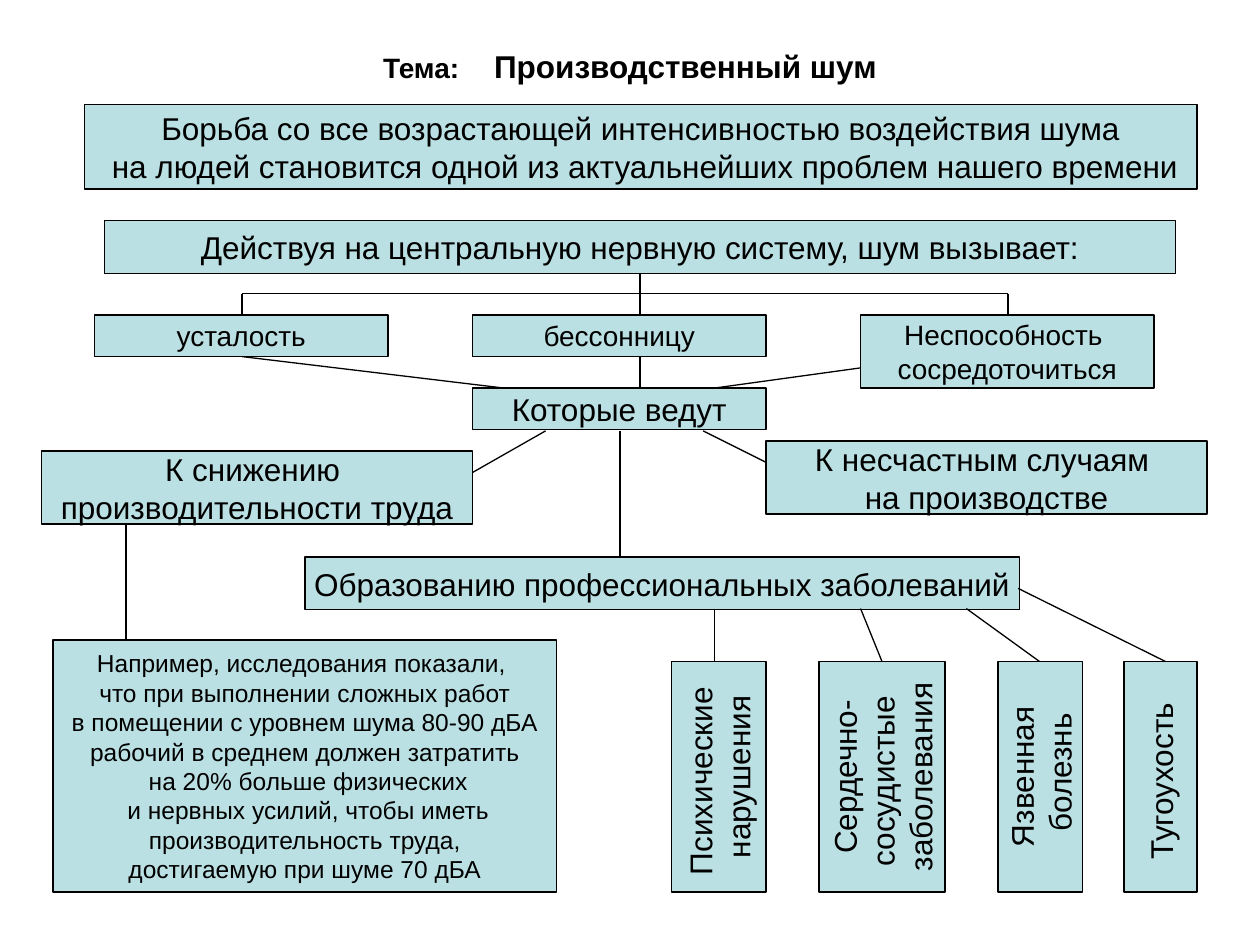
from pptx import Presentation
from pptx.dml.color import RGBColor
from pptx.enum import shapes, text
from pptx.oxml import xmlchemy
from pptx.util import Inches, Pt

FONT = "Arial"
BLACK = RGBColor(0x00, 0x00, 0x00)
PALE_TEAL = RGBColor(0xBB, 0xE0, 0xE3)
LINE_WIDTH = Pt(0.75)

# Text, size in points, letter spacing in hundredths of a point
TITLE_RUNS = [("Тема:", 16, 0), (" ", 18, 1500), ("Производственный шум", 18, 0)]

# Left, top, width, height, text size, lines
BOXES = [
    (0.67, 0.83, 8.83, 0.67, 18, [
        "Борьба со все возрастающей интенсивностью воздействия шума",
        " на людей становится одной из актуальнейших проблем нашего времени"]),
    (0.83, 1.75, 8.5, 0.42, 18, ["Действуя на центральную нервную систему, шум вызывает:"]),
    (0.75, 2.5, 2.33, 0.33, 16, ["усталость"]),
    (3.75, 2.5, 2.33, 0.33, 16, ["бессонницу"]),
    (6.83, 2.5, 2.33, 0.58, 16, ["Неспособность ", "сосредоточиться"]),
    (3.75, 3.08, 2.33, 0.33, 18, ["Которые ведут"]),
    (6.08, 3.5, 3.5, 0.58, 18, ["К несчастным случаям ", "на производстве"]),
    (0.33, 3.58, 3.42, 0.58, 18, ["К снижению ", "производительности труда"]),
    (2.42, 4.42, 5.67, 0.42, 18, ["Образованию профессиональных заболеваний"]),
    (0.42, 5.08, 4, 2, 14, [
        "Например, исследования показали, ",
        "что при выполнении сложных работ",
        " в помещении с уровнем шума 80-90 дБА ",
        "рабочий в среднем должен затратить",
        " на 20% больше физических",
        " и нервных усилий, чтобы иметь",
        " производительность труда, ",
        "достигаемую при шуме 70 дБА"]),
]

# Diseases stand upright in one row: left, width, lines
DISEASE_TOP, DISEASE_HEIGHT = 5.25, 1.83
DISEASES = [
    (8.92, 0.58, ["Тугоухость "]),
    (7.92, 0.67, ["Язвенная", " болезнь"]),
    (6.5, 1, ["Сердечно-", "сосудистые ", "заболевания"]),
    (5.33, 0.75, ["Психические ", "нарушения"]),
]

# Start x, start y, end x, end y
LINES = [
    # nervous system to its three effects
    (5.08, 2.17, 5.08, 2.5), (1.92, 2.33, 8, 2.33),
    (1.92, 2.33, 1.92, 2.5), (8, 2.33, 8, 2.5),
    # effects to "which lead"
    (1.92, 2.83, 4, 3.08), (5.08, 2.83, 5.08, 3.08), (6.83, 2.92, 5.67, 3.08),
    # "which lead" to consequences, and the example
    (4.33, 3.42, 3.75, 3.75), (5.58, 3.42, 6.08, 3.67),
    (4.92, 3.42, 4.92, 4.42), (1, 4.17, 1, 5.08),
    # occupational illness to the diseases
    (5.67, 4.83, 5.67, 5.25), (6.83, 4.83, 7, 5.25),
    (7.67, 4.83, 8.25, 5.25), (8.08, 4.67, 9.25, 5.25),
]


def add_run(paragraph, words, size, bold=False):
    run = paragraph.add_run()
    run.text = words
    run.font.name = FONT
    run.font.size = Pt(size)
    run.font.bold = bold
    run.font.color.rgb = BLACK
    return run


def add_title(slide):
    title = slide.shapes.title
    title.left, title.top = Inches(0.5), Inches(0.3)
    title.width, title.height = Inches(9), Inches(0.45)
    title.text_frame.vertical_anchor = text.MSO_ANCHOR.MIDDLE
    paragraph = title.text_frame.paragraphs[0]
    paragraph.alignment = text.PP_ALIGN.CENTER
    for words, size, spacing in TITLE_RUNS:
        run = add_run(paragraph, words, size, bold=True)
        if spacing:
            run.font._element.set("spc", str(spacing))


def add_box(slide, left, top, width, height, size, lines):
    box = slide.shapes.add_shape(
        shapes.MSO_SHAPE.RECTANGLE,
        Inches(left), Inches(top), Inches(width), Inches(height))
    box.shadow.inherit = False
    box.fill.solid()
    box.fill.fore_color.rgb = PALE_TEAL
    box.line.color.rgb = BLACK
    box.line.width = LINE_WIDTH
    frame = box.text_frame
    frame.word_wrap = False
    frame.vertical_anchor = text.MSO_ANCHOR.MIDDLE
    for index, line in enumerate(lines):
        paragraph = frame.add_paragraph() if index else frame.paragraphs[0]
        paragraph.alignment = text.PP_ALIGN.CENTER
        add_run(paragraph, line, size)
    return box


def add_upright_box(slide, left, width, lines):
    """Add a box that is laid out flat and turned about its centre."""
    turn = (DISEASE_HEIGHT - width) / 2
    box = add_box(slide, left - turn, DISEASE_TOP + turn, DISEASE_HEIGHT, width, 18, lines)
    box.rotation = 270


def add_line(slide, *ends):
    line = slide.shapes.add_connector(
        shapes.MSO_CONNECTOR.STRAIGHT, *(Inches(end) for end in ends))
    line.line.color.rgb = BLACK
    line.line.width = LINE_WIDTH
    properties = line._element.spPr
    properties.append(xmlchemy.OxmlElement("a:effectLst"))


def main():
    presentation = Presentation()
    presentation.slide_width, presentation.slide_height = Inches(10), Inches(7.5)
    slide = presentation.slides.add_slide(presentation.slide_layouts[5])
    add_title(slide)
    for box in BOXES:
        add_box(slide, *box)
    for disease in DISEASES:
        add_upright_box(slide, *disease)
    for line in LINES:
        add_line(slide, *line)
    presentation.save("out.pptx")


if __name__ == "__main__":
    main()
